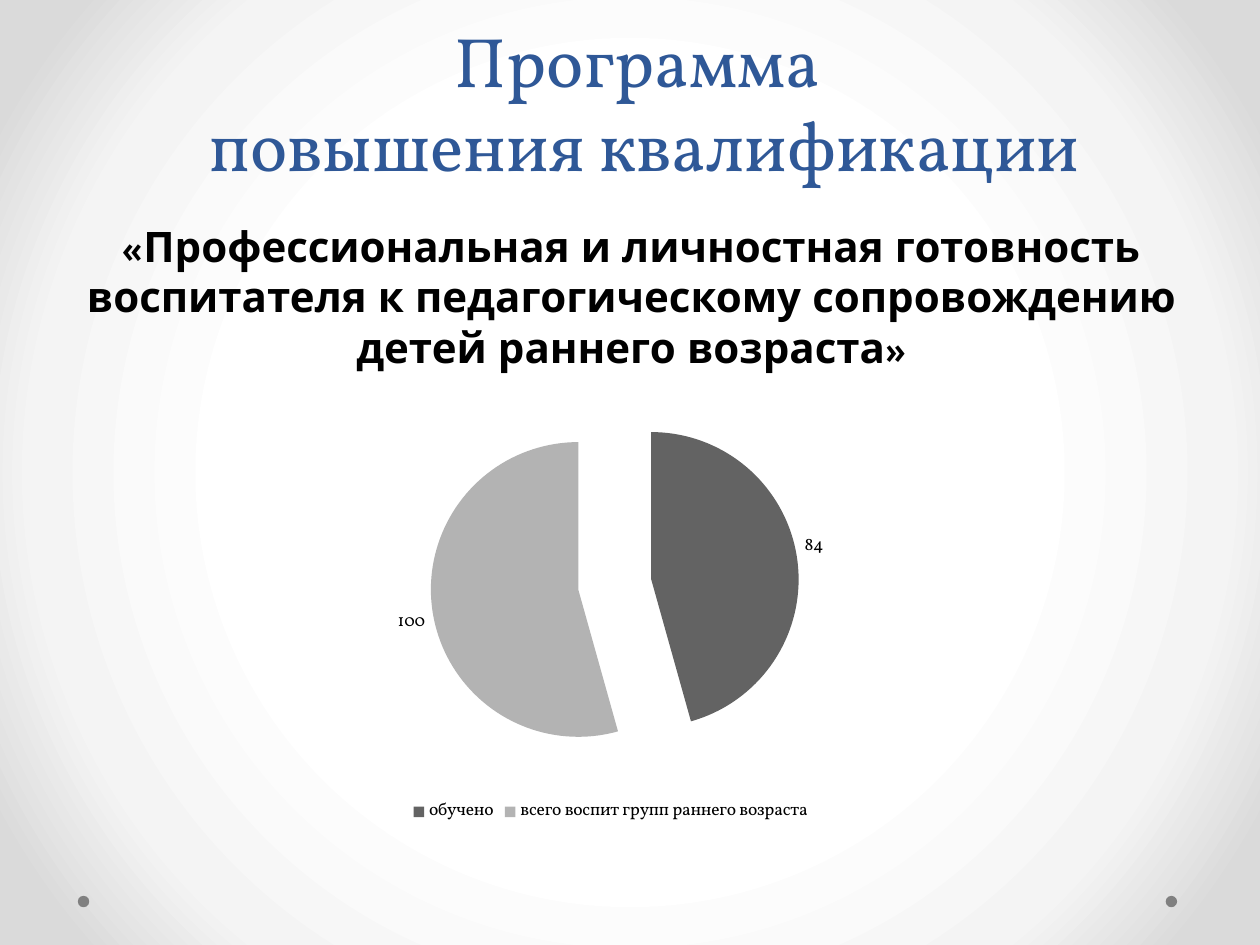
import pptx
import pptx.chart.data
import pptx.dml.color
import pptx.enum.chart
import pptx.enum.shapes
import pptx.enum.text
import pptx.oxml
import pptx.oxml.ns
import pptx.util
from pptx.util import Cm

RGBColor = pptx.dml.color.RGBColor
BLUE = RGBColor(0x2F, 0x58, 0x97)
BLACK = RGBColor(0, 0, 0)
DOT_GRAY = RGBColor(0x80, 0x80, 0x80)
DARK_GRAY = RGBColor(0x63, 0x63, 0x63)
LIGHT_GRAY = RGBColor(0xB3, 0xB3, 0xB3)
BACKGROUND_STOPS = [
    (50, RGBColor(0xFF, 0xFF, 0xFF)),
    (76, RGBColor(0xF4, 0xF4, 0xF4)),
    (92, RGBColor(0xDA, 0xDA, 0xDA)),
]
TITLE_FONT = "Vollkorn"
BODY_FONT = "League Spartan"


def set_background(slide):
    """Fill the background with a circular gradient from the centre."""
    fill = slide.background.fill
    fill.solid()
    stops = "".join(
        f'<a:gs pos="{position * 1000}"><a:srgbClr val="{color}"/></a:gs>'
        for position, color in BACKGROUND_STOPS
    )
    gradient = pptx.oxml.parse_xml(
        f'<a:gradFill {pptx.oxml.ns.nsdecls("a")} rotWithShape="1">'
        f'<a:gsLst>{stops}</a:gsLst><a:path path="circle">'
        '<a:fillToRect l="50000" t="50000" r="50000" b="50000"/>'
        "</a:path></a:gradFill>"
    )
    properties = slide.background._cSld.bg.bgPr
    solid = properties.find(pptx.oxml.ns.qn("a:solidFill"))
    properties.replace(solid, gradient)


def add_dot(slide, left):
    diameter = Cm(0.23)
    dot = slide.shapes.add_shape(
        pptx.enum.shapes.MSO_SHAPE.OVAL, left, Cm(18.06), diameter, diameter
    )
    dot.shadow.inherit = False
    dot.fill.solid()
    dot.fill.fore_color.rgb = DOT_GRAY
    dot.line.fill.background()


def format_font(font, name, size, color, bold=False):
    font.name = name
    font.size = pptx.util.Pt(size)
    font.color.rgb = color
    font.bold = bold


def add_text(slide, text, box, anchor, name, size, color, bold=False):
    """Add a centred one-paragraph text box; box is left, top, width, height."""
    text_frame = slide.shapes.add_textbox(*box).text_frame
    text_frame.word_wrap = True
    text_frame.vertical_anchor = anchor
    paragraph = text_frame.paragraphs[0]
    paragraph.text = text
    paragraph.alignment = pptx.enum.text.PP_ALIGN.CENTER
    for run in paragraph.runs:
        format_font(run.font, name, size, color, bold)


def add_training_chart(slide):
    data = pptx.chart.data.CategoryChartData()
    data.categories = ["обучено", "всего воспит групп раннего возраста"]
    data.add_series("Series 1", [84, 100])
    chart = slide.shapes.add_chart(
        pptx.enum.chart.XL_CHART_TYPE.PIE_EXPLODED,
        Cm(5.31), Cm(7.72), Cm(14), Cm(8.99), data,
    ).chart
    format_font(chart.font, TITLE_FONT, 10, BLACK)
    chart.has_title = False
    chart.has_legend = True
    chart.legend.position = pptx.enum.chart.XL_LEGEND_POSITION.BOTTOM
    chart.legend.include_in_layout = False

    plot = chart.plots[0]
    plot.vary_by_categories = True
    plot.has_data_labels = True
    plot.data_labels.show_value = True
    plot.data_labels.show_percentage = False
    plot.data_labels.position = pptx.enum.chart.XL_LABEL_POSITION.OUTSIDE_END
    series = plot.series[0]
    for index, color in enumerate([DARK_GRAY, LIGHT_GRAY]):
        point_format = series.points[index].format
        point_format.fill.solid()
        point_format.fill.fore_color.rgb = color
        point_format.line.fill.background()


def main():
    presentation = pptx.Presentation()
    presentation.slide_width = Cm(25.4)
    presentation.slide_height = Cm(19.05)
    slide = presentation.slides.add_slide(presentation.slide_layouts[6])
    set_background(slide)
    for left in (Cm(23.5), Cm(1.57)):
        add_dot(slide, left)
    anchors = pptx.enum.text.MSO_ANCHOR
    add_text(
        slide, "Программа \vповышения квалификации",
        (Cm(1.3), Cm(1.93), Cm(23.39), Cm(1.93)),
        anchors.BOTTOM, TITLE_FONT, 40, BLUE,
    )
    add_text(
        slide,
        "«Профессиональная и личностная готовность\v"
        "воспитателя к педагогическому сопровождению детей раннего возраста»",
        (Cm(1.3), Cm(4.32), Cm(22.86), Cm(12.57)),
        anchors.TOP, BODY_FONT, 24, BLACK, bold=True,
    )
    add_training_chart(slide)
    presentation.save("out.pptx")


if __name__ == "__main__":
    main()
